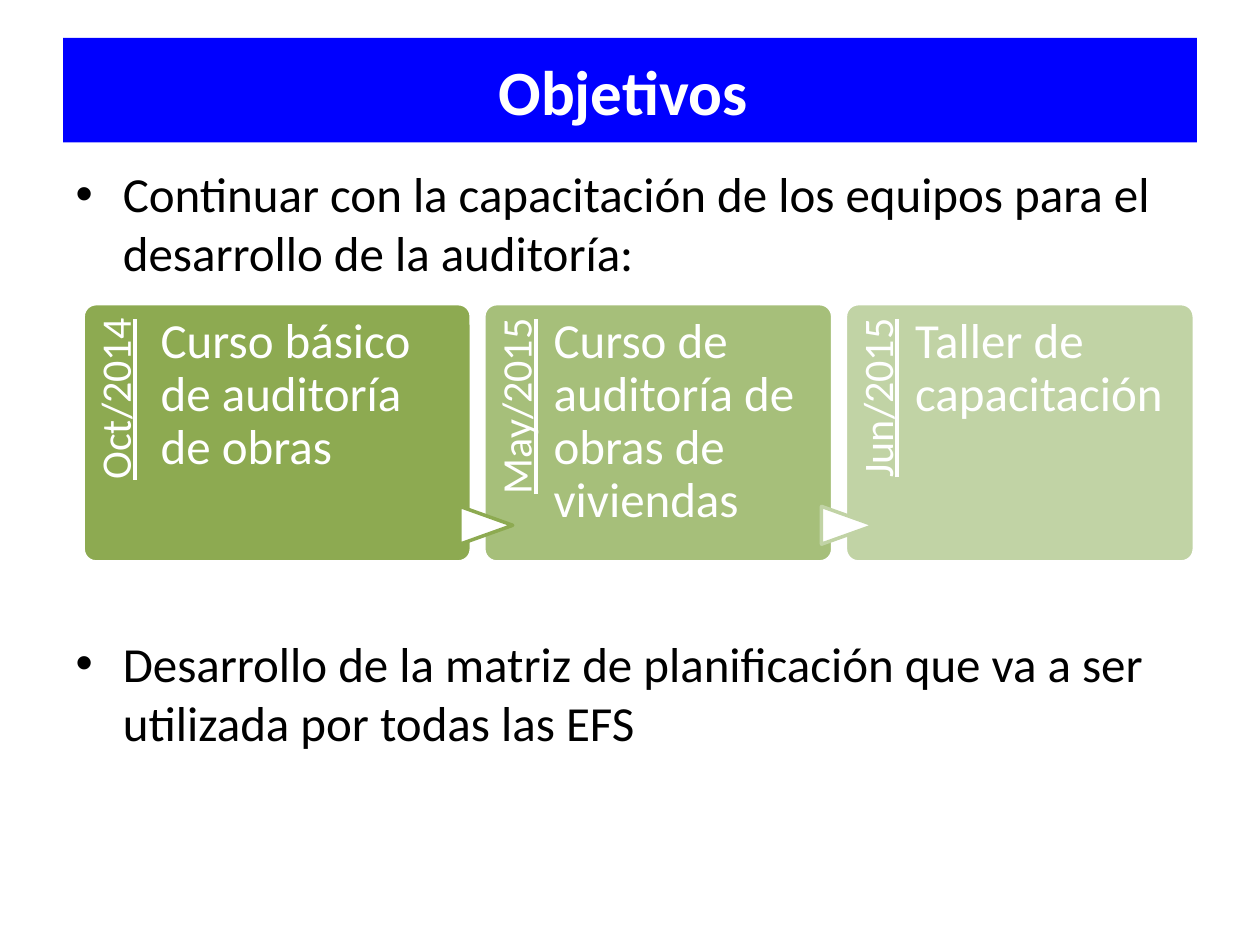
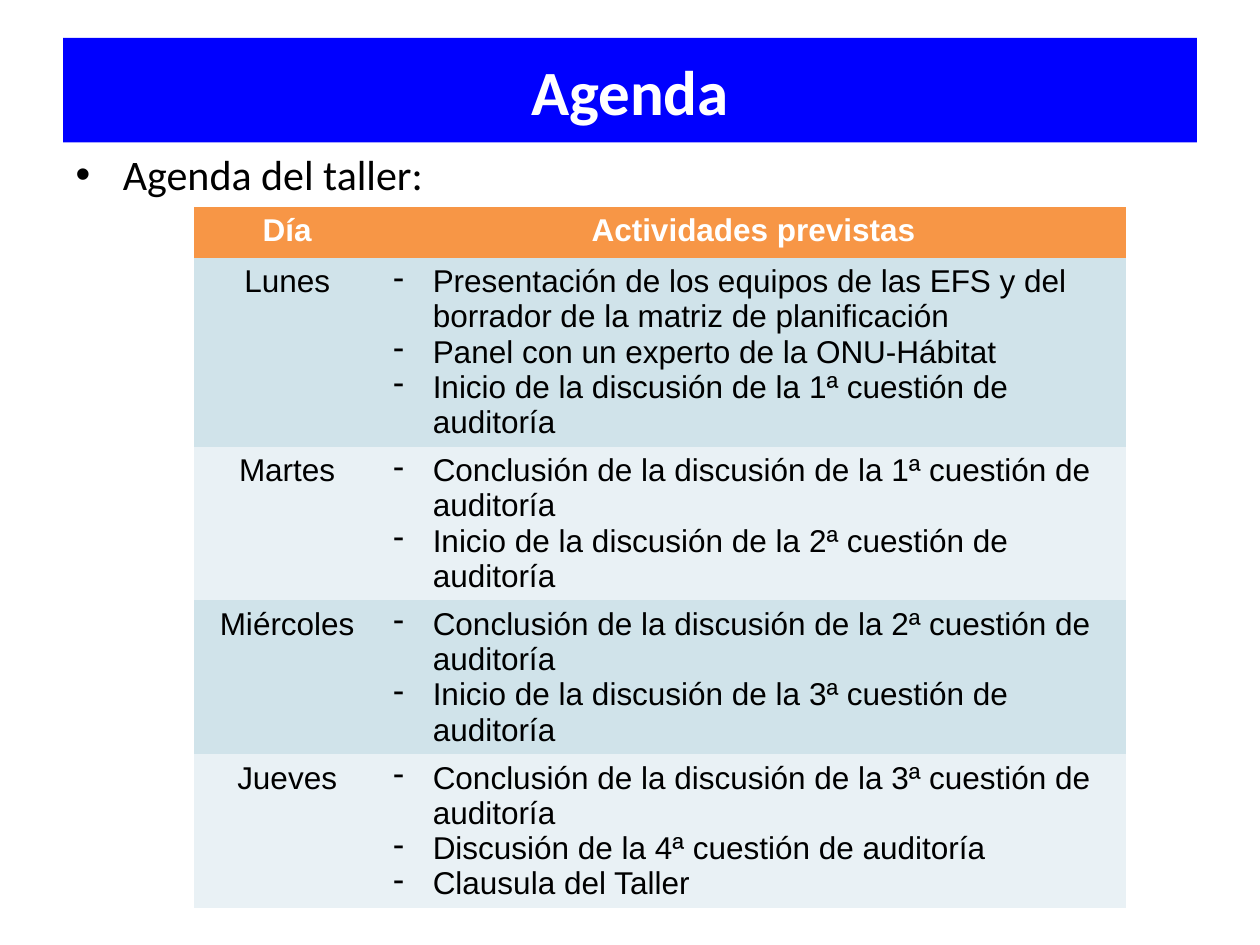
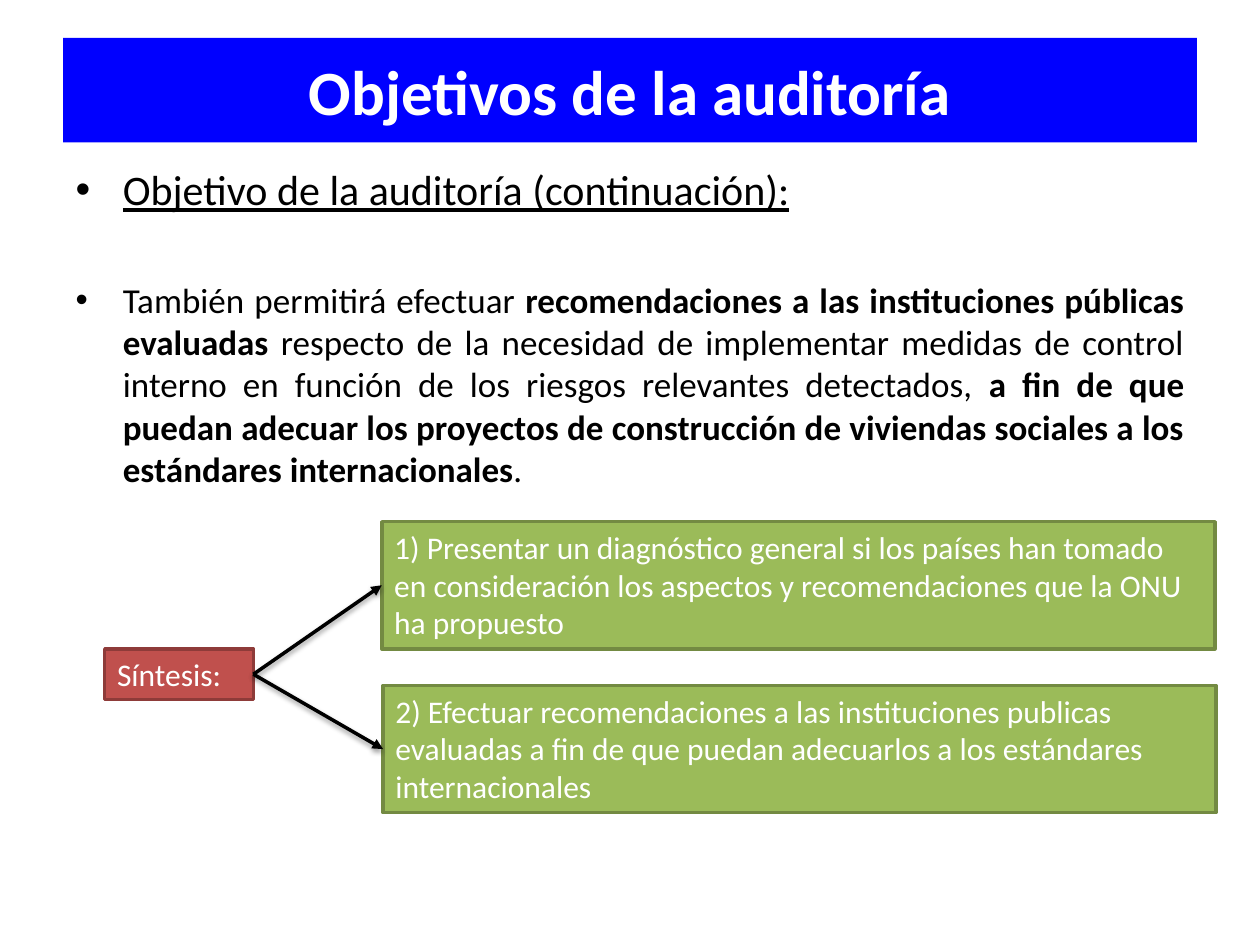
"""Build three slides on the goals and agenda of an audit workshop."""
from lxml import etree
from pptx import Presentation
from pptx.dml.color import RGBColor
from pptx.enum import shapes, text
from pptx.oxml import ns
from pptx.util import Pt

COLORS = {
    "band": "0000FF", "white": "FFFFFF", "black": "000000",
    "header": "F79646", "row_dark": "D0E3EA", "row_light": "E9F1F5",
    "red": "C0504D", "red_line": "8E3B39", "green": "9BBB59", "green_line": "738A42",
    "step_1": "8DAA51", "step_2": "A6BF7A", "step_3": "C1D3A5",
}

GOALS = [
    {"runs": [("Continuar con la capacitación de los equipos para el desarrollo de la auditoría:", False)],
     "size": 28},
    {"runs": [("Desarrollo de la matriz de planificación que va a ser utilizada por todas las EFS", False)],
     "size": 28, "before": 201},
]
STEPS = [
    ("Oct/2014", "Curso básico de auditoría de obras", 221.8, "step_1"),
    ("May/2015", "Curso de auditoría de obras de viviendas", 199.4, "step_2"),
    ("Jun/2015", "Taller de capacitación", 199.4, "step_3"),
]
ARROW_LINES = ["step_1", "step_3"]

AGENDA_INTRO = [{"runs": [("Agenda del taller:", False)], "size": 24}]
AGENDA_HEADER = ("Día", "Actividades previstas")
AGENDA = [
    ("Lunes", ["Presentación de los equipos de las EFS y del borrador de la matriz de planificación",
               "Panel con un experto de la ONU-Hábitat",
               "Inicio de la discusión de la 1ª cuestión de auditoría"]),
    ("Martes", ["Conclusión de la discusión de la 1ª cuestión de auditoría",
                "Inicio de la discusión de la 2ª cuestión de auditoría"]),
    ("Miércoles", ["Conclusión de la discusión de la 2ª cuestión de auditoría",
                   "Inicio de la discusión de la 3ª cuestión de auditoría"]),
    ("Jueves", ["Conclusión de la discusión de la 3ª cuestión de auditoría",
                "Discusión de la 4ª cuestión de auditoría",
                "Clausula del Taller"]),
]

AUDIT_GOALS = [
    {"runs": [("Objetivo de la auditoría (continuación):", False)], "size": 24, "underline": True},
    {"runs": [
        ("También permitirá efectuar ", False),
        ("recomendaciones a las instituciones públicas evaluadas", True),
        (" respecto de la necesidad de implementar medidas de control interno en función de los "
         "riesgos relevantes detectados, ", False),
        ("a fin de que puedan adecuar los proyectos de construcción de viviendas sociales a los "
         "estándares internacionales", True),
        (".", False)],
     "size": 20, "before": 37, "align": text.PP_ALIGN.JUSTIFY},
]
SUMMARY = ("Síntesis:", (59.8, 370.8, 85, 29), "red")
FINDINGS = [
    ("1) Presentar un diagnóstico general si los países han tomado en consideración los aspectos y "
     "recomendaciones que la ONU ha propuesto", (218.2, 298.1, 476, 72.7), "green"),
    ("2) Efectuar recomendaciones a las instituciones publicas evaluadas a fin de que puedan "
     "adecuarlos a los estándares internacionales", (218.9, 391.7, 476, 72.7), "green"),
]


def rgb(name):
    return RGBColor.from_string(COLORS[name])


def place(shape, box):
    shape.left, shape.top, shape.width, shape.height = map(Pt, box)


def set_font(font, size, color, name="Calibri", bold=None, underline=None):
    font.name, font.size, font.bold, font.underline = name, Pt(size), bold, underline
    font.color.rgb = rgb(color)


def add_child(parent, tag, **attributes):
    return etree.SubElement(parent, ns.qn(tag), attributes)


def add_filled(slide, kind, box, fill, line):
    shape = slide.shapes.add_shape(kind, *map(Pt, box))
    shape.shadow.inherit = False
    shape.fill.solid()
    shape.fill.fore_color.rgb = rgb(fill)
    shape.line.color.rgb = rgb(line)
    shape.line.width = Pt(2)
    return shape


def add_slide(presentation, title, items, body_top=90):
    slide = presentation.slides.add_slide(presentation.slide_layouts[1])
    band = slide.shapes.title
    place(band, (36, 21.6, 648, 59.8))
    band.fill.solid()
    band.fill.fore_color.rgb = rgb("band")
    band.text_frame.text = title
    band.text_frame.auto_size = text.MSO_AUTO_SIZE.NONE
    set_font(band.text_frame.paragraphs[0].font, 36, "white", bold=True)

    body = slide.placeholders[1]
    place(body, (36, body_top, 648, 395.3))
    frame = body.text_frame
    frame.auto_size = text.MSO_AUTO_SIZE.NONE
    for index, item in enumerate(items):
        paragraph = frame.add_paragraph() if index else frame.paragraphs[0]
        paragraph.space_before = Pt(item.get("before", 0))
        paragraph.alignment = item.get("align")
        set_font(paragraph.font, item["size"], "black", underline=item.get("underline"))
        for words, bold in item["runs"]:
            run = paragraph.add_run()
            run.text = words
            if bold:
                run.font.bold = True
    return slide


def add_step_text(slide, words, box, size, margins, **font):
    label = slide.shapes.add_textbox(*map(Pt, box))
    frame = label.text_frame
    frame.word_wrap = True
    frame.margin_left, frame.margin_top, frame.margin_right, frame.margin_bottom = map(Pt, margins)
    frame.text = words
    paragraph = frame.paragraphs[0]
    paragraph.line_spacing = 0.9
    set_font(paragraph.font, size, "white", **font)
    return label


def add_steps(slide):
    left, top, height, gap, date_length = 47.5, 173.5, 147.6, 7.2, 121
    for index, (date, course, width, color) in enumerate(STEPS):
        card = add_filled(slide, shapes.MSO_SHAPE.ROUNDED_RECTANGLE,
                          (left, top, width, height), color, "white")
        card.adjustments[0] = 0.05
        strip = width * 0.2
        date_box = (left + (strip - date_length) / 2, top + (date_length - strip) / 2, date_length, strip)
        label = add_step_text(slide, date, date_box, 24, (0, 6.5, 8.6, 0), underline=True)
        label.rotation = 270
        label.text_frame.paragraphs[0].alignment = text.PP_ALIGN.RIGHT
        if index:
            arrow = add_filled(slide, shapes.MSO_SHAPE.FLOWCHART_EXTRACT,
                               (left - 9.4, 285.1, 21.6, 30.2), "white", ARROW_LINES[index - 1])
            arrow.rotation = 90
        add_step_text(slide, course, (left + strip, top, width * 0.75, height), 28, (0, 7.2, 0, 0))
        left += width + gap


def fill_cell(cell, lines, fill, color, bold=False, bulleted=False):
    cell.fill.solid()
    cell.fill.fore_color.rgb = rgb(fill)
    cell.text_frame.text = "\n".join(lines)
    for paragraph in cell.text_frame.paragraphs:
        if bulleted:
            properties = paragraph._p.get_or_add_pPr()
            properties.set("marL", str(Pt(22.5)))
            properties.set("indent", str(Pt(-22.5)))
            add_child(properties, "a:buChar", char="-")
        else:
            paragraph.alignment = text.PP_ALIGN.CENTER
        set_font(paragraph.font, 18, color, name="Arial", bold=bold)


def add_agenda(slide):
    row_height = 29.2
    rows = len(AGENDA) + 1
    frame = slide.shapes.add_table(rows, 2, Pt(110.6), Pt(118.1), Pt(533), Pt(row_height * rows))
    table = frame.table
    table._tbl.tblPr.find(ns.qn("a:tableStyleId")).text = "{2D5ABB26-0587-4C30-8999-92F81FD0307C}"
    for column, width in zip(table.columns, (107, 426)):
        column.width = Pt(width)
    for column, heading in enumerate(AGENDA_HEADER):
        fill_cell(table.cell(0, column), [heading], "header", "white", bold=True)
    for row, (day, activities) in enumerate(AGENDA, 1):
        fill = "row_dark" if row % 2 else "row_light"
        fill_cell(table.cell(row, 0), [day], fill, "black")
        fill_cell(table.cell(row, 1), activities, fill, "black", bulleted=True)


def add_box(slide, words, box, color):
    shape = add_filled(slide, shapes.MSO_SHAPE.RECTANGLE, box, color, color + "_line")
    frame = shape.text_frame
    frame.word_wrap = True
    frame.auto_size = text.MSO_AUTO_SIZE.SHAPE_TO_FIT_TEXT
    frame.vertical_anchor = text.MSO_ANCHOR.TOP
    frame.text = words
    frame.paragraphs[0].alignment = text.PP_ALIGN.LEFT
    set_font(frame.paragraphs[0].font, 18, "white")
    return shape


def add_arrow(slide, source, target):
    arrow = slide.shapes.add_connector(shapes.MSO_CONNECTOR.STRAIGHT, 0, 0, 0, 0)
    arrow.begin_connect(source, 3)
    arrow.end_connect(target, 1)
    arrow.line.color.rgb = rgb("black")
    arrow.line.width = Pt(2)
    add_child(arrow.line._get_or_add_ln(), "a:tailEnd", type="triangle")
    effects = add_child(arrow._element.spPr, "a:effectLst")
    shadow = add_child(effects, "a:outerShdw", blurRad=str(Pt(3.1)), dist=str(Pt(1.6)),
                       dir="5400000", rotWithShape="0")
    shade = add_child(shadow, "a:srgbClr", val=COLORS["black"])
    add_child(shade, "a:alpha", val="38000")


def main():
    presentation = Presentation()
    presentation.slide_width, presentation.slide_height = Pt(720), Pt(540)

    add_steps(add_slide(presentation, "Objetivos ", GOALS))
    add_agenda(add_slide(presentation, "Agenda", AGENDA_INTRO, body_top=81.4))

    slide = add_slide(presentation, "Objetivos de la auditoría", AUDIT_GOALS)
    summary = add_box(slide, *SUMMARY)
    findings = [add_box(slide, *finding) for finding in FINDINGS]
    for finding in findings:
        add_arrow(slide, summary, finding)

    presentation.save("out.pptx")


if __name__ == "__main__":
    main()
